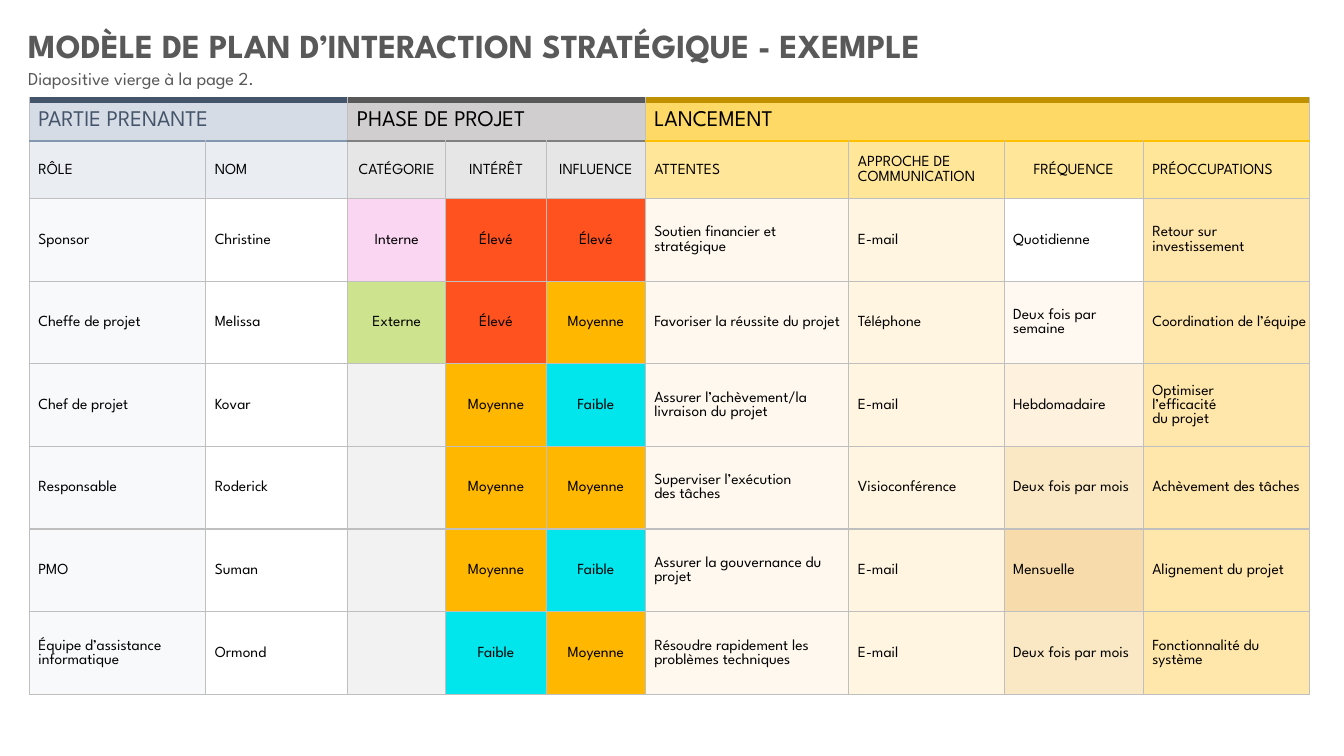
import pptx
import pptx.util
import pptx.dml.color
import pptx.enum.text
import pptx.oxml

TITLE = "MODÈLE DE PLAN D’INTERACTION STRATÉGIQUE - EXEMPLE"
SUBTITLE = "Diapositive vierge à la page\u00a02."
FONT = "League Spartan"

COLORS = {
    "white": "FFFFFF", "black": "000000", "grey": "595959", "grid": "BFBFBF",
    "navy": "44546A", "blue": "8497B0", "blue_band": "D6DCE5",
    "blue_head": "EAEEF3", "blue_body": "F7F9FB",
    "mid_grey": "808080", "grey_band": "D0CECE", "grey_head": "E7E6E6", "grey_body": "F2F2F2",
    "bronze": "BF9000", "gold": "FFC000", "gold_band": "FFD966", "gold_head": "FFE699",
    "cream": "FEF8EF", "sand": "FFF5E1", "butter": "FFE6AB",
    "pink": "FAD6F3", "green": "CEE38D", "red": "FF521F", "amber": "FFB700", "cyan": "01E5EC",
    "weekly_2": "FFF9F1", "weekly": "FEF2DE", "monthly_2": "F9E8C3", "monthly": "F7DBAB",
}

# label, columns, text, band fill, header fill, top line, bottom line
GROUPS = [
    ("PARTIE PRENANTE", 2, "navy", "blue_band", "blue_head", "navy", "blue"),
    ("PHASE DE PROJET", 3, "black", "grey_band", "grey_head", "grey", "mid_grey"),
    ("LANCEMENT", 4, "black", "gold_band", "gold_head", "bronze", "gold"),
]

COLUMNS = [
    ("RÔLE", 1.75, "blue_body"), ("NOM", 1.41, "white"),
    ("CATÉGORIE", 0.97, "grey_body"), ("INTÉRÊT", 1.0, "grey_body"),
    ("INFLUENCE", 0.98, "grey_body"), ("ATTENTES", 2.02, "cream"),
    ("APPROCHE DE COMMUNICATION", 1.54, "sand"), ("FRÉQUENCE", 1.38, "white"),
    ("PRÉOCCUPATIONS", 1.65, "butter"),
]
CENTERED = ("CATÉGORIE", "INTÉRÊT", "INFLUENCE")

STAKEHOLDERS = [
    ("Sponsor", "Christine", "Interne", "Élevé", "Élevé", "Soutien financier et stratégique",
     "E-mail", "Quotidienne", "Retour sur investissement"),
    ("Cheffe de projet", "Melissa", "Externe", "Élevé", "Moyenne", "Favoriser la réussite du projet",
     "Téléphone", "Deux fois par semaine", "Coordination de l’équipe"),
    ("Chef de projet", "Kovar", "", "Moyenne", "Faible", "Assurer l’achèvement/la livraison du projet",
     "E-mail", "Hebdomadaire", "Optimiser \nl’efficacité \ndu projet"),
    ("Responsable", "Roderick", "", "Moyenne", "Moyenne", "Superviser l’exécution \ndes tâches",
     "Visioconférence", "Deux fois par mois", "Achèvement des tâches"),
    ("PMO", "Suman", "", "Moyenne", "Faible", "Assurer la gouvernance du projet",
     "E-mail", "Mensuelle", "Alignement du projet"),
    ("Équipe d’assistance informatique", "Ormond", "", "Faible", "Moyenne",
     "Résoudre rapidement les problèmes techniques",
     "E-mail", "Deux fois par mois", "Fonctionnalité du système"),
]

VALUE_FILLS = {
    "Interne": "pink", "Externe": "green",
    "Élevé": "red", "Moyenne": "amber", "Faible": "cyan",
    "Deux fois par semaine": "weekly_2", "Hebdomadaire": "weekly",
    "Deux fois par mois": "monthly_2", "Mensuelle": "monthly",
}

BAND_HEIGHT, HEAD_HEIGHT, BODY_HEIGHT = 0.41, 0.57, 0.82
GRID = ("grid", 1)

Inches = pptx.util.Inches
PP_ALIGN = pptx.enum.text.PP_ALIGN
MSO_ANCHOR = pptx.enum.text.MSO_ANCHOR


def rgb(name):
    return pptx.dml.color.RGBColor.from_string(COLORS[name])


def write(p, text, size, color, bold=False, align=PP_ALIGN.LEFT):
    p.text = text
    p.alignment = align
    p.font.name = FONT
    p.font.size = pptx.util.Pt(size)
    p.font.bold = bold
    p.font.color.rgb = rgb(color)


def set_borders(cell, top, bottom):
    tcPr = cell._tc.get_or_add_tcPr()
    for side, (color, width) in zip("LRTB", (GRID, GRID, top, bottom)):
        tcPr.append(pptx.oxml.parse_xml(
            f'<a:ln{side} xmlns:a="http://schemas.openxmlformats.org/drawingml/2006/main" '
            f'w="{int(pptx.util.Pt(width))}"><a:solidFill><a:srgbClr val="{COLORS[color]}"/>'
            f'</a:solidFill><a:prstDash val="solid"/></a:ln{side}>'))


def format_cell(cell, text, fill, size=11, color="black", centered=False, top=GRID, bottom=GRID):
    set_borders(cell, top, bottom)
    cell.fill.solid()
    cell.fill.fore_color.rgb = rgb(fill)
    cell.vertical_anchor = MSO_ANCHOR.MIDDLE
    cell.margin_left = Inches(0.01 if centered else 0.09)
    cell.margin_top = cell.margin_right = Inches(0.01)
    cell.margin_bottom = 0
    write(cell.text_frame.paragraphs[0], text, size, color,
          align=PP_ALIGN.CENTER if centered else PP_ALIGN.LEFT)


def place_text(sp, left, top, width, height, text, size, bold=False):
    sp.left, sp.top, sp.width, sp.height = map(Inches, (left, top, width, height))
    tf = sp.text_frame
    tf.word_wrap = True
    tf.auto_size = pptx.enum.text.MSO_AUTO_SIZE.SHAPE_TO_FIT_TEXT
    tf.vertical_anchor = MSO_ANCHOR.TOP
    write(tf.paragraphs[0], text, size, "grey", bold)


def add_plan(s):
    heights = [BAND_HEIGHT, HEAD_HEIGHT] + [BODY_HEIGHT] * len(STAKEHOLDERS)
    widths = [width for _, width, _ in COLUMNS]
    frame = s.shapes.add_table(len(heights), len(widths), Inches(0.29), Inches(0.99),
                               Inches(sum(widths)), Inches(sum(heights)))
    table = frame.table
    table.first_row = table.horz_banding = False
    for column, width in zip(table.columns, widths):
        column.width = Inches(width)
    for row, height in zip(table.rows, heights):
        row.height = Inches(height)

    first = 0
    for label, span, color, band, head, top, bottom in GROUPS:
        rule = (bottom, 2.25)
        for c in range(first, first + span):
            format_cell(table.cell(0, c), label if c == first else "", band, 16, color,
                        top=(top, 4.5), bottom=rule)
            name = COLUMNS[c][0]
            format_cell(table.cell(1, c), name, head,
                        centered=name in CENTERED or name == "FRÉQUENCE", top=rule)
        table.cell(0, first).merge(table.cell(0, first + span - 1))
        first += span

    for r, values in enumerate(STAKEHOLDERS, 2):
        for c, (value, (name, _, fill)) in enumerate(zip(values, COLUMNS)):
            format_cell(table.cell(r, c), value, VALUE_FILLS.get(value, fill),
                        centered=name in CENTERED)


def main():
    prs = pptx.Presentation()
    prs.slide_width, prs.slide_height = Inches(13.33), Inches(7.5)
    s = prs.slides.add_slide(prs.slide_layouts[5])
    place_text(s.shapes.title, 0.18, 0.2, 10.03, 0.5, TITLE, 24, bold=True)
    add_plan(s)
    place_text(s.shapes.add_textbox(0, 0, 0, 0), 0.18, 0.62, 4.63, 0.32, SUBTITLE, 13)
    prs.save("out.pptx")


if __name__ == "__main__":
    main()
